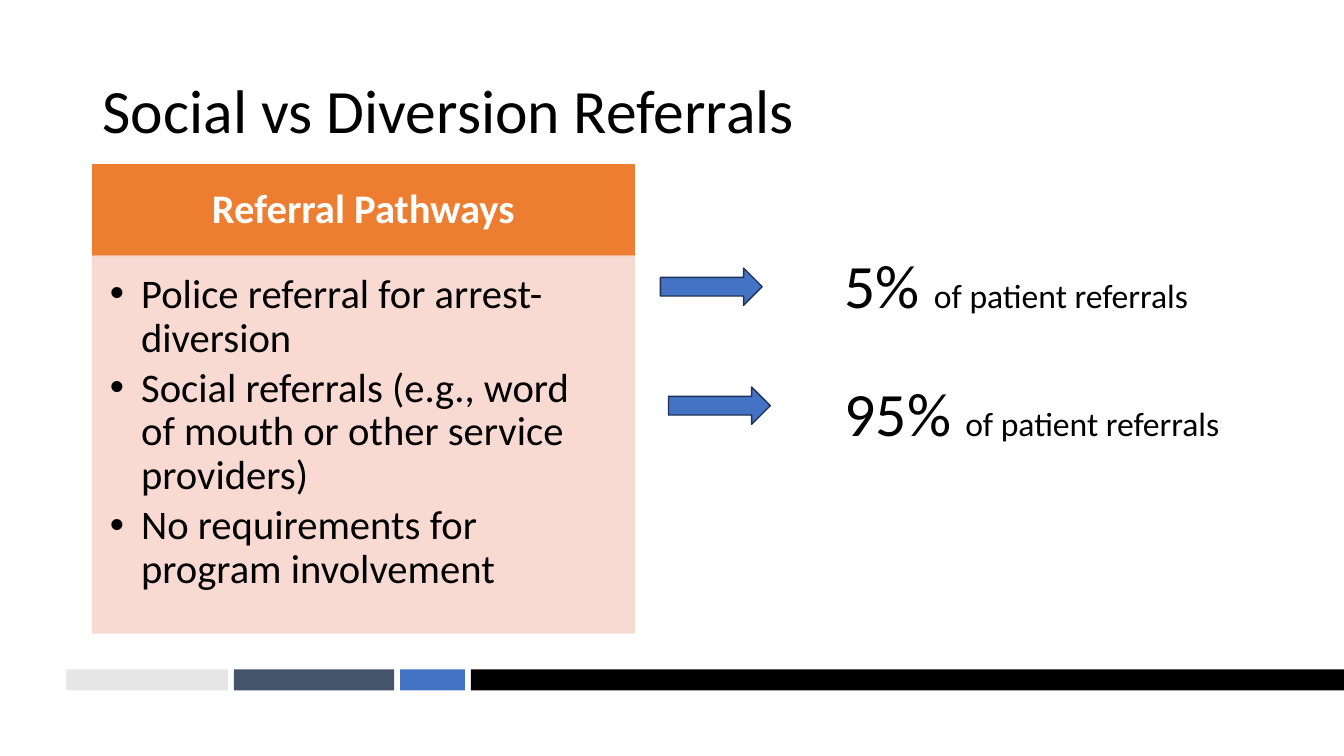
from dataclasses import dataclass

from lxml.etree import SubElement
from pptx import Presentation
from pptx.dml.color import RGBColor
from pptx.enum.shapes import MSO_SHAPE as Shape
from pptx.enum.text import MSO_ANCHOR as Anchor, PP_ALIGN as Align
from pptx.oxml.ns import qn
from pptx.util import Inches, Pt


@dataclass(frozen=True)
class Theme:
    font: str = "Calibri"
    black: str = "000000"
    white: str = "FFFFFF"
    orange: str = "ED7D31"
    peach: str = "F8D7CE"
    blue: str = "4472C4"
    navy: str = "1E3256"
    slate: str = "44546A"
    grey: str = "E7E6E6"
    heading_size: int = 44
    panel_size: int = 29
    caption_size: int = 24


THEME = Theme()
PATHWAYS = [
    "Police referral for arrest-diversion",
    "Social referrals (e.g., word of mouth or other service providers)",
    "No requirements for program involvement",
]


def add_block(slide, box, color, outline=None, preset=Shape.RECTANGLE):
    block = slide.shapes.add_shape(preset, *map(Inches, box))
    block.shadow.inherit = False
    block.fill.solid()
    block.fill.fore_color.rgb = RGBColor.from_string(color)
    if outline:
        block.line.color.rgb = RGBColor.from_string(outline)
        block.line.width = Pt(1)
    else:
        block.line.fill.background()
    return block


def set_frame(shape, anchor=Anchor.TOP, insets=(0.1, 0.05, 0.1, 0.05)):
    frame = shape.text_frame
    frame.word_wrap = True
    frame.vertical_anchor = anchor
    (frame.margin_left, frame.margin_top,
     frame.margin_right, frame.margin_bottom) = map(Inches, insets)
    return frame


def set_font(font, size, color=THEME.black, bold=False):
    font.name, font.size, font.bold = THEME.font, Pt(size), bold
    font.color.rgb = RGBColor.from_string(color)


def add_bullet(paragraph, indent):
    props = paragraph._p.get_or_add_pPr()
    props.set("marL", str(Inches(indent)))
    props.set("indent", str(-Inches(indent)))
    SubElement(props, qn("a:buFont"), typeface="Arial")
    SubElement(props, qn("a:buChar"), char="•")


def add_footer_bar(slide, left, top, height):
    """Row of colour segments with equal gaps, ending at the slide edge."""
    gap = 0.06
    segments = [(1.6, THEME.grey), (1.59, THEME.slate),
                (0.64, THEME.blue), (8.66, THEME.black)]
    for width, color in segments:
        add_block(slide, (left, top, width, height), color)
        left += width + gap


def add_title(slide, box):
    title = slide.shapes.add_textbox(*map(Inches, box))
    line = set_frame(title, Anchor.MIDDLE).paragraphs[0]
    line.text = "Social vs Diversion Referrals"
    line.line_spacing = 0.9
    set_font(line.font, THEME.heading_size)


def add_pathways_panel(slide, left, top, width, header_height, body_height):
    # Header band
    header = add_block(slide, (left, top, width, header_height),
                       THEME.orange, THEME.orange)
    heading = set_frame(header, Anchor.MIDDLE,
                        (0.23, 0.13, 0.23, 0.13)).paragraphs[0]
    heading.text = "Referral Pathways"
    heading.alignment = Align.CENTER
    heading.line_spacing = 0.9
    set_font(heading.font, THEME.panel_size, THEME.white, bold=True)

    # Slightly transparent body
    body = add_block(slide, (left, top + header_height, width, body_height),
                     THEME.peach, THEME.peach)
    for color in body._element.spPr.iter(qn("a:srgbClr")):
        SubElement(color, qn("a:alpha"), val="90000")

    # Bulleted pathways
    frame = set_frame(body, insets=(0.17, 0.17, 0.23, 0.25))
    for index, pathway in enumerate(PATHWAYS):
        item = frame.add_paragraph() if index else frame.paragraphs[0]
        item.text = pathway
        item.alignment = Align.LEFT
        item.line_spacing = 0.9
        item.space_after = Pt(4.35)
        add_bullet(item, 0.31)
        set_font(item.font, THEME.panel_size)


def add_share(slide, arrow_left, arrow_top, text_left, text_top, percent):
    """Arrow pointing at a large percentage with a smaller caption."""
    add_block(slide, (arrow_left, arrow_top, 1.01, 0.37),
              THEME.blue, THEME.navy, Shape.RIGHT_ARROW)
    share = slide.shapes.add_textbox(
        *map(Inches, (text_left, text_top, 4.9, 0.84)))
    line = set_frame(share).paragraphs[0]
    for text, size in [(f"{percent} ", THEME.heading_size),
                       ("of patient referrals", THEME.caption_size)]:
        run = line.add_run()
        run.text = text
        set_font(run.font, size)


def main():
    deck = Presentation()
    deck.slide_width, deck.slide_height = Inches(13.33), Inches(7.5)
    slide = deck.slides.add_slide(deck.slide_layouts[6])

    add_footer_bar(slide, 0.66, 6.64, 0.21)
    add_title(slide, (0.92, 0.4, 11.5, 1.45))
    add_pathways_panel(slide, 0.92, 1.63, 5.37, 0.91, 3.74)
    add_share(slide, 6.55, 2.66, 8.28, 2.4, "5%")
    add_share(slide, 6.63, 3.84, 8.28, 3.67, "95%")

    deck.save("out.pptx")


if __name__ == "__main__":
    main()
